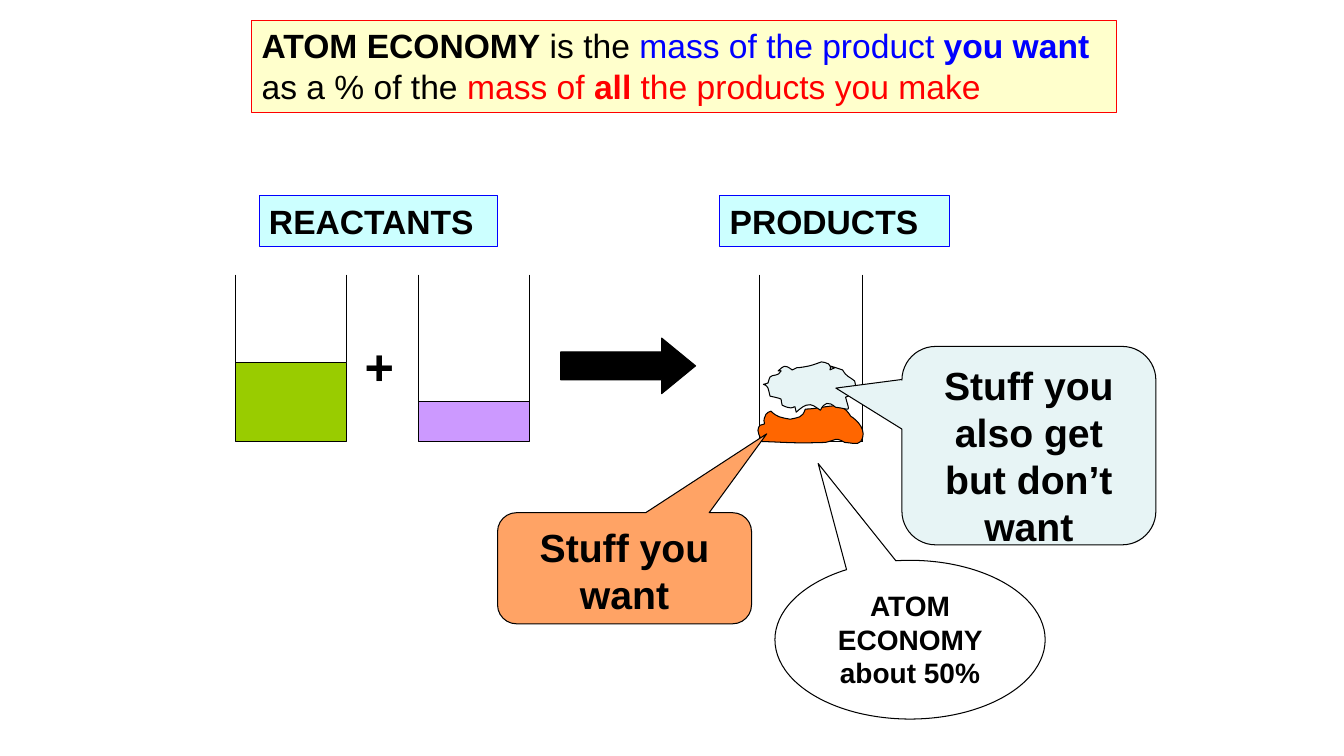
from lxml.etree import SubElement
from pptx import Presentation
from pptx.dml.color import RGBColor
from pptx.enum.shapes import MSO_CONNECTOR, MSO_SHAPE
from pptx.enum.text import MSO_ANCHOR, MSO_AUTO_SIZE, PP_ALIGN
from pptx.oxml.ns import qn
from pptx.util import Cm, Pt

BLACK = RGBColor(0x00, 0x00, 0x00)
BLUE = RGBColor(0x00, 0x00, 0xFF)
RED = RGBColor(0xFF, 0x00, 0x00)
CREAM = RGBColor(0xFF, 0xFF, 0xCC)
CYAN = RGBColor(0xCC, 0xFF, 0xFF)
GREEN = RGBColor(0x99, 0xCC, 0x00)
PURPLE = RGBColor(0xCC, 0x99, 0xFF)
ORANGE = RGBColor(0xFF, 0x66, 0x00)
LIGHT_ORANGE = RGBColor(0xFF, 0xA3, 0x65)
PALE_BLUE = RGBColor(0xE7, 0xF4, 0xF5)

# Boxes are left, top, width, height in centimetres.
DEFINITION_BOX = (6.34, 0.51, 21.79, 2.32)
DEFINITION = [  # text, colour, bold
    ("ATOM ECONOMY", BLACK, True),
    (" is the ", BLACK, False),
    ("mass of the product ", BLUE, False),
    ("you want", BLUE, True),
    (" as a % of the ", BLACK, False),
    ("mass of ", RED, False),
    ("all", RED, True),
    (" the products you make", RED, False),
]
LABELS = [
    ("REACTANTS", (6.53, 4.93, 6, 1.28)),
    ("PRODUCTS", (18.14, 4.93, 5.79, 1.28)),
]
BEAKER_TOP, BEAKER_BOTTOM = 6.92, 11.13
BEAKERS = [  # left, width, liquid depth, liquid colour
    (5.94, 2.8, 2, GREEN),
    (10.54, 2.8, 1, PURPLE),
    (19.13, 2.6, 0, None),
]
PLUS_BOX = (8.94, 8.33, 1.19, 1.78)
ARROW_BOX = (14.13, 8.52, 3.4, 1.4)
CALLOUTS = [  # text, shape, box, adjustments, size, fill
    ("Stuff you want", MSO_SHAPE.ROUNDED_RECTANGULAR_CALLOUT,
     (12.54, 12.92, 6.4, 2.8), (0.56, -1.21, 0.17), 28, LIGHT_ORANGE),
    ("Stuff you also get but don’t want", MSO_SHAPE.ROUNDED_RECTANGULAR_CALLOUT,
     (22.73, 8.73, 6.4, 5), (-0.76, -0.29, 0.17), 28, PALE_BLUE),
    ("ATOM ECONOMY about 50%", MSO_SHAPE.OVAL_CALLOUT,
     (19.53, 14.12, 6.81, 4), (-0.34, -1.11), 20, None),
]

# Blobs: a start point, then Bézier curves (two controls and an end point).
BLOB_UNIT = Cm(2.54) / 100
WANTED_BLOB = ((754, 438), [
    (783, 439, 787, 440, 819, 439), (823, 438, 826, 437, 829, 436),
    (832, 435, 838, 439, 838, 439), (843, 439, 851, 442, 854, 438),
    (861, 428, 851, 417, 844, 413), (834, 396, 823, 405, 799, 406),
    (796, 415, 792, 414, 784, 416), (774, 414, 771, 414, 765, 408),
    (763, 409, 761, 409, 760, 411), (754, 423, 764, 419, 754, 422),
    (753, 423, 752, 425, 752, 427), (754, 439, 758, 433, 754, 438),
])
UNWANTED_BLOB = ((772, 368), [
    (778, 363, 778, 361, 786, 367), (797, 362, 783, 367, 803, 363),
    (807, 362, 815, 359, 815, 359), (817, 360, 820, 359, 822, 361),
    (828, 367, 818, 369, 828, 365), (815, 360, 833, 366, 836, 367),
    (840, 374, 842, 373, 848, 378), (851, 389, 847, 391, 839, 394),
    (843, 410, 845, 406, 829, 404), (822, 398, 818, 399, 814, 407),
    (809, 404, 806, 400, 800, 402), (796, 403, 790, 409, 790, 409),
    (787, 396, 792, 410, 776, 402), (775, 401, 776, 398, 775, 396),
    (774, 395, 764, 393, 764, 393), (763, 390, 763, 387, 762, 385),
    (759, 379, 753, 383, 762, 380), (763, 378, 763, 375, 764, 374),
    (767, 371, 772, 374, 775, 368), (775, 367, 773, 368, 772, 368),
])


def style(shape, fill, line=BLACK):
    shape.shadow.inherit = False
    if fill is None:
        shape.fill.background()
    else:
        shape.fill.solid()
        shape.fill.fore_color.rgb = fill
    shape.line.color.rgb = line
    shape.line.width = Pt(0.75)


def add_box(shapes, kind, box, fill, line=BLACK):
    shape = shapes.add_shape(kind, *map(Cm, box))
    style(shape, fill, line)
    return shape


def write(shape, text, size, alignment=PP_ALIGN.LEFT):
    frame = shape.text_frame
    frame.word_wrap = True
    frame.vertical_anchor = MSO_ANCHOR.TOP
    frame.text = text
    paragraph = frame.paragraphs[0]
    paragraph.alignment = alignment
    paragraph.font.name = "Arial"
    paragraph.font.size = Pt(size)
    paragraph.font.bold = True
    paragraph.font.color.rgb = BLACK


def add_line(shapes, *ends):
    line = shapes.add_connector(MSO_CONNECTOR.STRAIGHT, *map(Cm, ends))
    line.line.color.rgb = BLACK
    line.line.width = Pt(0.75)
    SubElement(line._element.spPr, qn("a:effectLst"))


def add_beaker(left, width, depth, colour):
    shapes = slide.shapes.add_group_shape().shapes
    level = BEAKER_BOTTOM - depth
    if depth:
        add_box(shapes, MSO_SHAPE.RECTANGLE, (left, level, width, depth), colour)
    else:
        add_line(shapes, left, BEAKER_BOTTOM, left + width, BEAKER_BOTTOM)
    for wall in (left, left + width):
        add_line(shapes, wall, BEAKER_TOP, wall, level)


def add_blob(start, curves, fill):
    """Draw a closed outline, joining every three points into a Bézier curve."""
    points = [start]
    for curve in curves:
        points += zip(curve[::2], curve[1::2])
    points = [(x * BLOB_UNIT, y * BLOB_UNIT) for x, y in points]
    builder = slide.shapes.build_freeform(*points[0])
    builder.add_line_segments(points[1:], close=True)
    blob = builder.convert_to_shape()
    style(blob, fill)
    segments = list(blob._element.iter(qn("a:lnTo")))
    for first in range(0, len(segments), 3):
        control, *others = segments[first:first + 3]
        control.tag = qn("a:cubicBezTo")
        for segment in others:
            control.append(segment[0])
            segment.getparent().remove(segment)


presentation = Presentation()
presentation.slide_width, presentation.slide_height = Cm(33.87), Cm(19.05)
slide = presentation.slides.add_slide(presentation.slide_layouts[5])

title = slide.shapes.title
title.left, title.top, title.width, title.height = map(Cm, DEFINITION_BOX)
title.fill.solid()
title.fill.fore_color.rgb = CREAM
title.line.color.rgb = RED
title.line.width = Pt(0.75)
write(title, "", 24)
title.text_frame.auto_size = MSO_AUTO_SIZE.NONE
for text, colour, bold in DEFINITION:
    run = title.text_frame.paragraphs[0].add_run()
    run.text = text
    run.font.name = "Arial"
    run.font.size = Pt(24)
    run.font.bold = bold
    run.font.color.rgb = colour

for text, box in LABELS:
    write(add_box(slide.shapes, MSO_SHAPE.RECTANGLE, box, CYAN, BLUE), text, 24)

for beaker in BEAKERS:
    add_beaker(*beaker)
write(slide.shapes.add_textbox(*map(Cm, PLUS_BOX)), "+", 36)
arrow = add_box(slide.shapes, MSO_SHAPE.RIGHT_ARROW, ARROW_BOX, BLACK)
arrow.adjustments[1] = 0.61

add_blob(*WANTED_BLOB, ORANGE)
add_blob(*UNWANTED_BLOB, PALE_BLUE)

for text, kind, box, adjustments, size, fill in CALLOUTS:
    callout = add_box(slide.shapes, kind, box, fill)
    for index, value in enumerate(adjustments):
        callout.adjustments[index] = value
    write(callout, text, size, PP_ALIGN.CENTER)

presentation.save("out.pptx")
